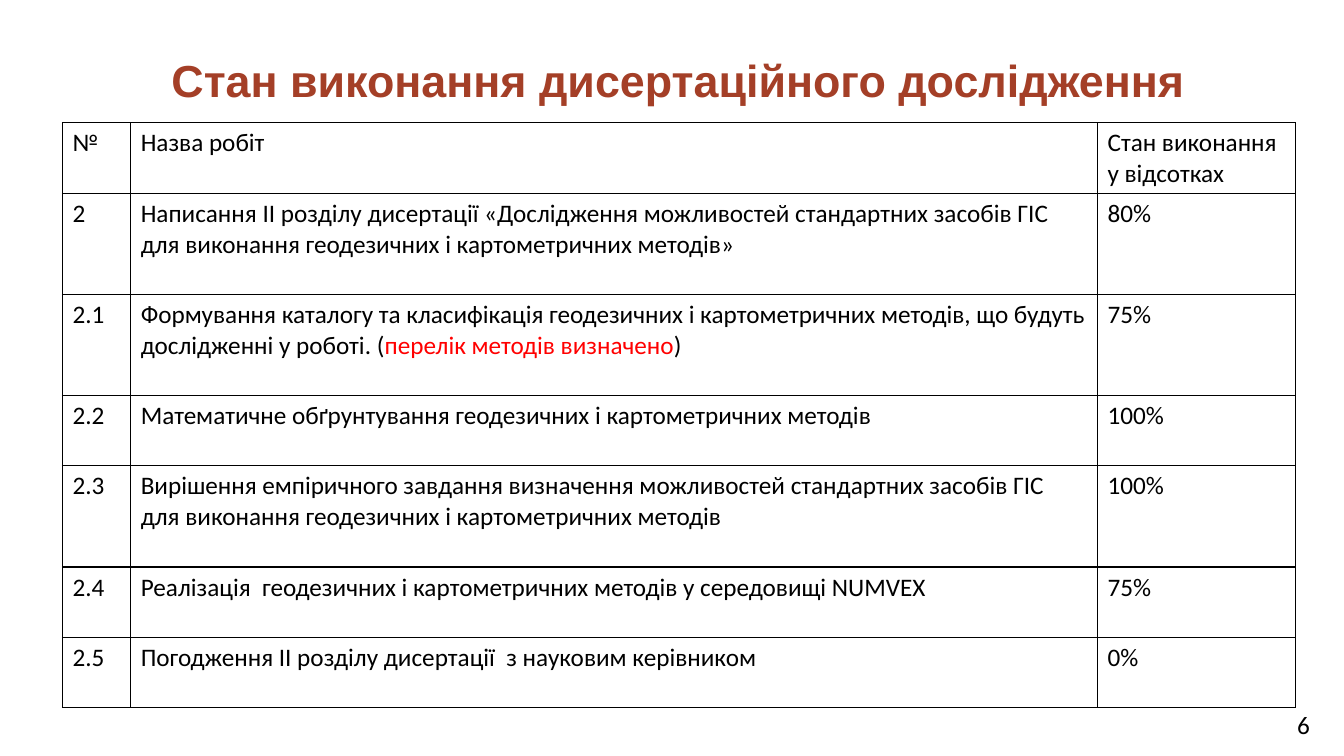
from lxml.etree import SubElement
from pptx import Presentation
from pptx.dml.color import RGBColor as RGB
from pptx.enum.text import PP_ALIGN as Align
from pptx.oxml.ns import qn
from pptx.util import Pt

TITLE = "Стан виконання дисертаційного дослідження"
PAGE_NUMBER = "6"
HEADER = ("№", "Назва робіт", "Стан виконання у відсотках")
# Each task: number, runs as (text, theme colour), percentage done
TASKS = [
    ("2", [("Написання ІI розділу дисертації «Дослідження можливостей стандартних засобів ГІС "
            "для виконання геодезичних і картометричних методів»", "text")], "80%"),
    ("2.1", [("Формування каталогу та класифікація геодезичних і картометричних методів, "
              "що будуть дослідженні у роботі. (", "text"),
             ("перелік методів визначено", "accent"), (")", "text")], "75%"),
    ("2.2", [("Математичне обґрунтування геодезичних і картометричних методів", "text")], "100%"),
    ("2.3", [("Вирішення емпіричного завдання визначення можливостей стандартних засобів ГІС "
              "для виконання геодезичних і картометричних методів", "text")], "100%"),
    ("2.4", [("Реалізація  геодезичних і картометричних методів у середовищі NUMVEX", "text")], "75%"),
    ("2.5", [("Погодження ІI розділу дисертації  з науковим керівником", "text")], "0%"),
]

THEME = {
    "title": RGB(0xA4, 0x3F, 0x27), "text": RGB(0, 0, 0), "accent": RGB(0xFF, 0, 0),
    "paper": RGB(0xFF, 0xFF, 0xFF), "border": "000000", "border_width": Pt(1),
    "title_font": "Arial", "body_font": "Calibri", "title_size": Pt(32), "body_size": Pt(18),
}
COLUMN_WIDTHS = (48.8, 690.6, 141.2)
SHORT_ROW, TALL_ROW = 50.2, 72.2
ONE_LINE_LIMIT = 80  # characters that fit on one line of the task column


def add_run(paragraph, text, colour, font="body_font", size="body_size", bold=False):
    run = paragraph.add_run()
    run.text = text
    run.font.name, run.font.size, run.font.bold = THEME[font], THEME[size], bold
    run.font.color.rgb = THEME[colour]


def set_borders(cell):
    properties = cell._tc.get_or_add_tcPr()
    for position, side in enumerate(("lnL", "lnR", "lnT", "lnB")):
        line = SubElement(properties, qn(f"a:{side}"), w=str(THEME["border_width"]))
        fill = SubElement(line, qn("a:solidFill"))
        SubElement(fill, qn("a:srgbClr"), val=THEME["border"])
        properties.remove(line)
        properties.insert(position, line)  # borders precede the cell fill


def add_task_table(slide):
    rows = [tuple([(label, "text")] for label in HEADER)]
    rows += [([(number, "text")], task, [(done, "text")]) for number, task, done in TASKS]
    heights = [TALL_ROW if sum(len(text) for text, _ in row[1]) > ONE_LINE_LIMIT else SHORT_ROW
               for row in rows]
    table = slide.shapes.add_table(len(rows), len(HEADER), Pt(44.6), Pt(87.8),
                                   Pt(sum(COLUMN_WIDTHS)), Pt(sum(heights))).table
    table.first_row = table.horz_banding = False
    for column, width in zip(table.columns, COLUMN_WIDTHS):
        column.width = Pt(width)
    for table_row, height, row in zip(table.rows, heights, rows):
        table_row.height = Pt(height)
        for cell, runs in zip(table_row.cells, row):
            cell.fill.solid()
            cell.fill.fore_color.rgb = THEME["paper"]
            set_borders(cell)
            for text, colour in runs:
                add_run(cell.text_frame.paragraphs[0], text, colour)


def main():
    deck = Presentation()
    deck.slide_width, deck.slide_height = Pt(960), Pt(540)
    slide = deck.slides.add_slide(deck.slide_layouts[6])

    title = slide.shapes.add_textbox(Pt(104.6), Pt(37.4), Pt(760), Pt(32.4)).text_frame
    title.margin_left = title.margin_right = title.margin_top = title.margin_bottom = 0
    title.word_wrap = False
    title.paragraphs[0].alignment = Align.CENTER
    add_run(title.paragraphs[0], TITLE, "title", "title_font", "title_size", bold=True)

    add_task_table(slide)

    page = slide.shapes.add_textbox(Pt(919.4), Pt(503.3), Pt(31.7), Pt(28.8)).text_frame
    page.word_wrap = True
    add_run(page.paragraphs[0], PAGE_NUMBER, "text")

    deck.save("out.pptx")


if __name__ == "__main__":
    main()
